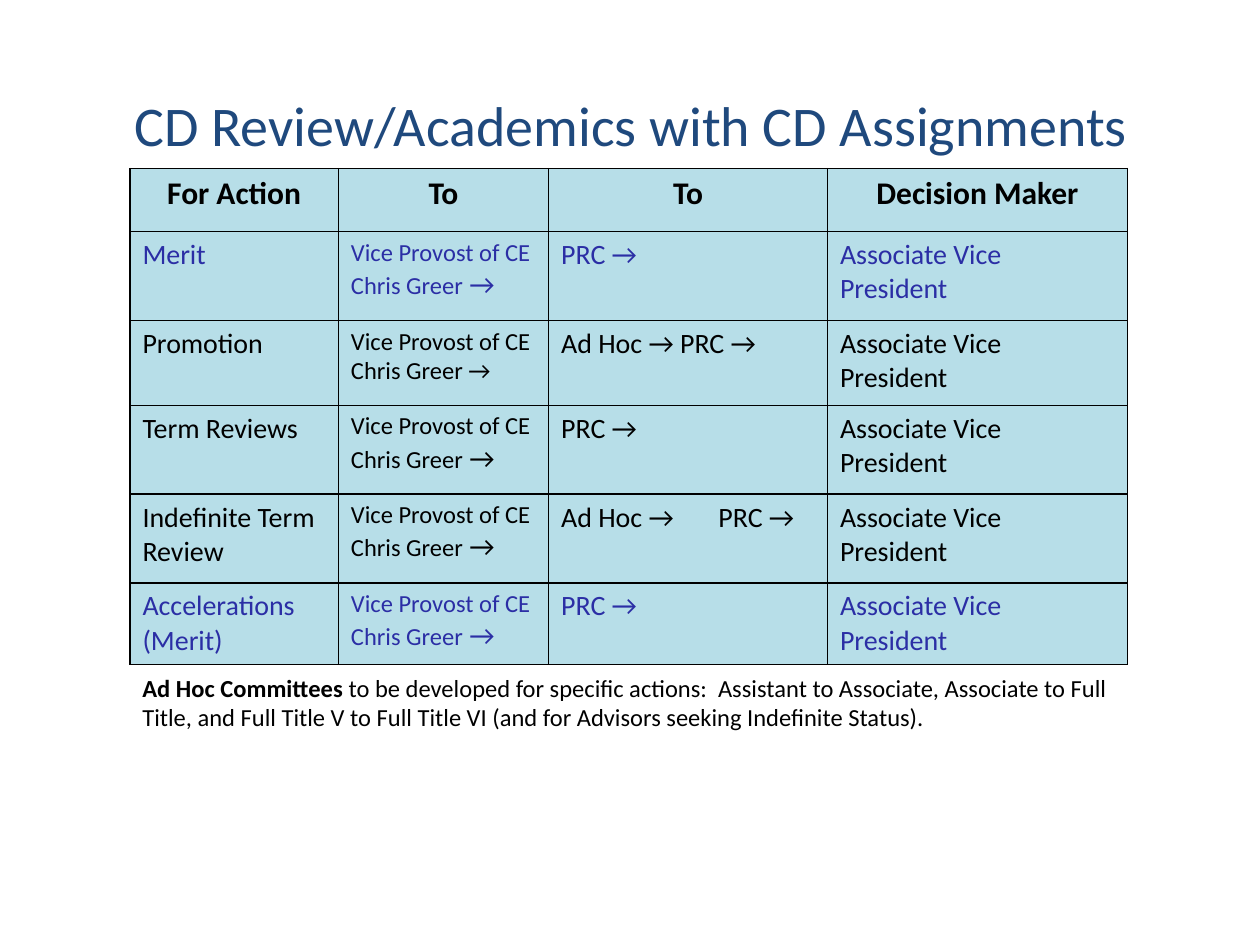
"""Build the slide on CD review steps and decision makers."""
import pptx
import pptx.dml.color
import pptx.enum.text
import pptx.oxml
import pptx.oxml.ns
import pptx.util
from pptx.util import Cm

THEME = {
    "font": "Calibri",
    "title": "1F497D", "text": "000000", "accent": "2B2EA5",
    "cell": "B7DEE8", "border": "000000",
    "title size": 32, "head size": 18, "body size": 16, "small size": 14,
}
ALIGN = pptx.enum.text.PP_ALIGN
ANCHOR = pptx.enum.text.MSO_ANCHOR
MAKER = [[("Associate Vice President", "body size")]]
PROVOST = [[("Vice Provost of CE Chris Greer", "small size"), (" →", "body size")]]
PRC = [[("PRC →", "body size")]]


def add_span(para, text, size, color, bold=False):
    span = para.add_run()
    span.text = text
    formats = {"name": THEME["font"], "size": pptx.util.Pt(THEME[size]), "bold": bold}
    for name, value in formats.items():
        setattr(span.font, name, value)
    span.font.color.rgb = pptx.dml.color.RGBColor.from_string(THEME[color])


def add_borders(cell):
    properties = cell._tc.get_or_add_tcPr()
    for position, side in enumerate(("lnL", "lnR", "lnT", "lnB")):
        line = pptx.oxml.parse_xml(
            f'<a:{side} {pptx.oxml.ns.nsdecls("a")} w="12700"><a:solidFill>'
            f'<a:srgbClr val="{THEME["border"]}"/></a:solidFill></a:{side}>')
        properties.insert(position, line)


deck = pptx.Presentation()
deck.slide_width, deck.slide_height = Cm(25.4), Cm(19.05)
page = deck.slides.add_slide(deck.slide_layouts[5])

title = page.shapes.title
places = {"left": Cm(2.03), "top": Cm(0.97), "width": Cm(21.39), "height": Cm(3.05)}
for name, value in places.items():
    setattr(title, name, value)
title.text_frame.vertical_anchor = ANCHOR.MIDDLE
para = title.text_frame.paragraphs[0]
para.alignment = ALIGN.CENTER
add_span(para, "CD Review/Academics with CD Assignments", "title size", "title")

heads = ["For Action", "To", "To", "Decision Maker"]
rows = [("text", [[[(head, "head size")]] for head in heads])]
actions = [
    ("Merit", "accent", PROVOST, PRC, MAKER),
    ("Promotion", "text",
     [[("Vice Provost of CE", "small size")], [("Chris Greer →", "small size")]],
     [[("Ad Hoc → PRC →", "body size")]],
     [[("Associate Vice", "body size")], [("President", "body size")]]),
    ("Term Reviews", "text", PROVOST, PRC, MAKER),
    ("Indefinite Term Review", "text", PROVOST,
     [[("Ad Hoc →\tPRC →", "body size")]], MAKER),
    ("Accelerations (Merit)", "accent", PROVOST, PRC, MAKER),
]
for action, color, *steps in actions:
    rows.append((color, [[[(action, "body size")]], *steps]))

widths = [4.2, 4.24, 5.62, 6.05]
heights = [1.27, 1.79, 1.71, 1.79, 1.79, 1.65]
table = page.shapes.add_table(
    len(rows), len(widths), Cm(2.62), Cm(3.4), Cm(sum(widths)), Cm(sum(heights))).table
table.first_row = table.horz_banding = False
for column, width in zip(table.columns, widths):
    column.width = Cm(width)
for row, height in zip(table.rows, heights):
    row.height = Cm(height)

for row_index, (color, contents) in enumerate(rows):
    is_head = row_index == 0
    for column_index, content in enumerate(contents):
        cell = table.cell(row_index, column_index)
        cell.fill.solid()
        cell.fill.fore_color.rgb = pptx.dml.color.RGBColor.from_string(THEME["cell"])
        add_borders(cell)
        for index, spans in enumerate(content):
            frame = cell.text_frame
            para = frame.add_paragraph() if index else frame.paragraphs[0]
            para.alignment = ALIGN.CENTER if is_head else ALIGN.LEFT
            if any("\t" in text for text, size in spans):
                para._p.get_or_add_pPr().append(pptx.oxml.parse_xml(
                    f'<a:tabLst {pptx.oxml.ns.nsdecls("a")}>'
                    f'<a:tab pos="{Cm(3.17)}" algn="l"/></a:tabLst>'))
            for text, size in spans:
                add_span(para, text, size, color, is_head)

note = page.shapes.add_textbox(Cm(2.62), Cm(13.44), Cm(20.11), Cm(1.5))
note.text_frame.word_wrap = True
para = note.text_frame.paragraphs[0]
add_span(para, "Ad Hoc Committees ", "small size", "text", True)
add_span(para, "to be developed for specific actions:  Assistant to Associate, "
         "Associate to Full Title, and Full Title V to Full Title VI "
         "(and for Advisors seeking Indefinite Status).", "small size", "text")

deck.save("out.pptx")
